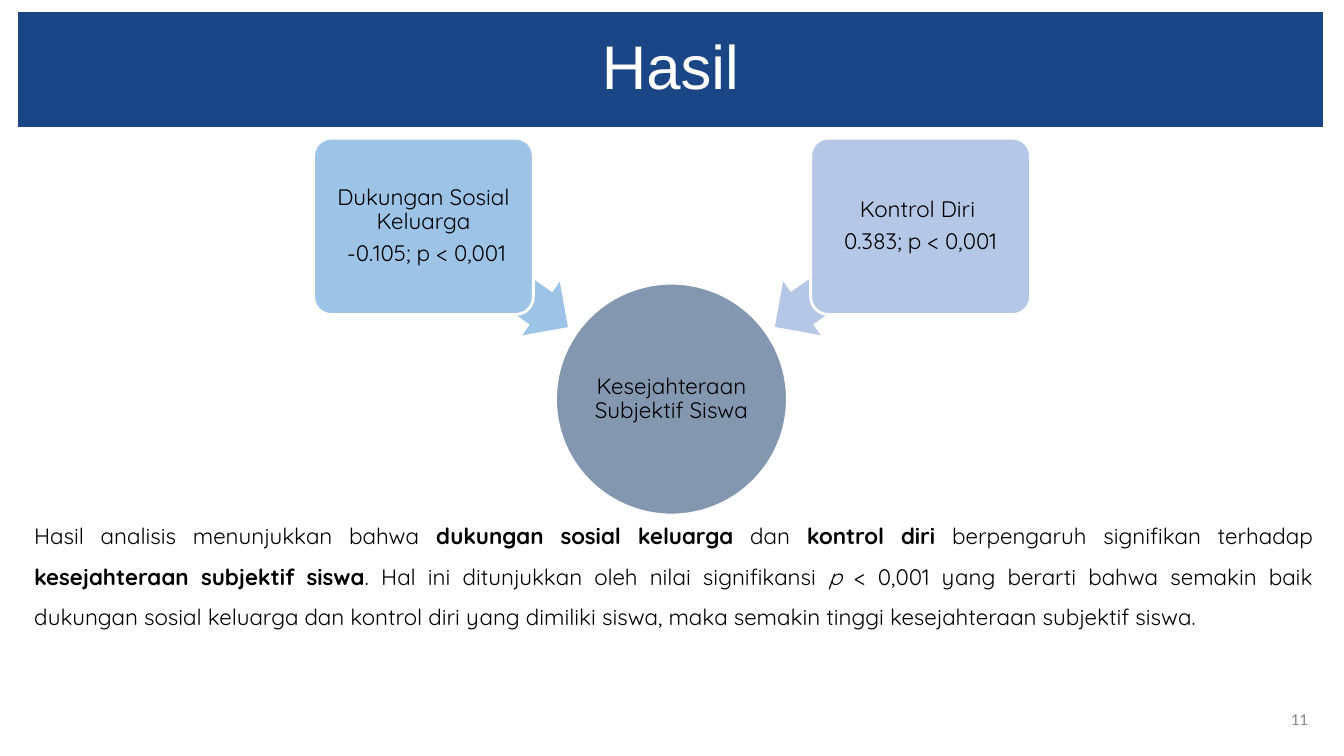
from pptx import Presentation
from pptx.dml.color import RGBColor
from pptx.enum.shapes import MSO_SHAPE
from pptx.enum.text import MSO_ANCHOR, PP_ALIGN
from pptx.util import Inches, Pt

RECTANGLE = MSO_SHAPE.RECTANGLE
ROUNDED = MSO_SHAPE.ROUNDED_RECTANGLE
ELLIPSE = MSO_SHAPE.OVAL
LEFT_ARROW = MSO_SHAPE.LEFT_ARROW
MIDDLE = MSO_ANCHOR.MIDDLE
CENTER, RIGHT, JUSTIFY = PP_ALIGN.CENTER, PP_ALIGN.RIGHT, PP_ALIGN.JUSTIFY

BODY_FONT = "Quicksand"
BLACK, WHITE, GREY = "000000", "FFFFFF", "888888"
NAVY, SLATE = "1B4685", "8497B0"

# Left edge, colour, lines of text, arrow left edge, arrow rotation
FACTORS = [
    (3.11, "9DC3E6", ["Dukungan Sosial Keluarga", " -0.105; p < 0,001"], 4.04, 214.9),
    (8.04, "B4C7E7", ["Kontrol Diri ", "0.383; p < 0,001"], 7.53, 325.3),
]

FINDINGS = [
    ("Hasil analisis menunjukkan bahwa ", ""),
    ("dukungan sosial keluarga", "bold"),
    (" dan ", ""),
    ("kontrol diri ", "bold"),
    ("berpengaruh signifikan terhadap ", ""),
    ("kesejahteraan subjektif siswa", "bold"),
    (". Hal ini ditunjukkan oleh nilai signifikansi ", ""),
    ("p", "italic"),
    (" < 0,001 yang berarti bahwa semakin baik dukungan sosial keluarga dan "
     "kontrol diri yang dimiliki siswa, maka semakin tinggi kesejahteraan "
     "subjektif siswa.", ""),
]


def color(hex_code):
    return RGBColor.from_string(hex_code)


def add_span(para, text, size, font, hex_code, style=""):
    span = para.add_run()
    span.text = text
    span.font.size = Pt(size)
    span.font.name = font
    span.font.color.rgb = color(hex_code)
    span.font.bold = style == "bold"
    span.font.italic = style == "italic"


def add_figure(page, kind, place, fill, outlined=False):
    figure = page.shapes.add_shape(kind, *map(Inches, place))
    figure.shadow.inherit = False
    figure.fill.solid()
    figure.fill.fore_color.rgb = color(fill)
    if outlined:
        figure.line.color.rgb = color(WHITE)
        figure.line.width = Pt(2)
    else:
        figure.line.fill.background()
    return figure


def write_centered(figure, lines, size, font, hex_code, inset):
    """Fill a figure with centred lines, one paragraph each."""
    frame = figure.text_frame
    frame.word_wrap = True
    frame.vertical_anchor = MIDDLE
    frame.margin_left = frame.margin_right = Inches(inset)
    frame.margin_top = frame.margin_bottom = Inches(inset)
    for index, line in enumerate(lines):
        para = frame.add_paragraph() if index else frame.paragraphs[0]
        para.alignment = CENTER
        para.line_spacing = 0.9
        if index:
            para.space_before = Pt(5.6)
        add_span(para, line, size, font, hex_code)


def add_text_box(page, place, alignment):
    """Add a wrapping text box and return its frame and first paragraph."""
    frame = page.shapes.add_textbox(*map(Inches, place)).text_frame
    frame.word_wrap = True
    para = frame.paragraphs[0]
    para.alignment = alignment
    return frame, para


def add_factor(page, left, fill, lines, arrow_left, rotation):
    arrow = add_figure(page, LEFT_ARROW, (arrow_left, 2.42, 1.75, 0.65), fill)
    arrow.adjustments[0] = 0.6
    arrow.adjustments[1] = 0.5
    arrow.rotation = rotation
    box = add_figure(page, ROUNDED, (left, 1.37, 2.18, 1.75), fill, True)
    box.adjustments[0] = 0.1
    write_centered(box, lines, 16, BODY_FONT, BLACK, 0.03)


def add_findings(page):
    _, para = add_text_box(page, (0.18, 5, 12.94, 1.52), JUSTIFY)
    para._p.get_or_add_pPr().set("marL", str(Inches(0.06)))
    para.line_spacing = 1.5
    for text, style in FINDINGS:
        add_span(para, text, 16, BODY_FONT, BLACK, style)


def add_page_number(page, number):
    frame, para = add_text_box(page, (12.5, 6.93, 0.57, 0.4), RIGHT)
    frame.vertical_anchor = MIDDLE
    add_span(para, number, 12, "Calibri", GREY)


def main():
    deck = Presentation()
    deck.slide_width, deck.slide_height = Inches(13.33), Inches(7.5)
    page = deck.slides.add_slide(deck.slide_layouts[6])

    title = add_figure(page, RECTANGLE, (0.18, 0.12, 12.94, 1.14), NAVY)
    write_centered(title, ["Hasil"], 44, "Arial", WHITE, 0.05)

    outcome = add_figure(page, ELLIPSE, (5.51, 2.81, 2.3, 2.3), SLATE, True)
    write_centered(outcome, ["Kesejahteraan Subjektif Siswa"], 16, BODY_FONT, BLACK, 0.01)
    for factor in FACTORS:
        add_factor(page, *factor)

    add_findings(page)
    add_page_number(page, "11")
    deck.save("out.pptx")


if __name__ == "__main__":
    main()
